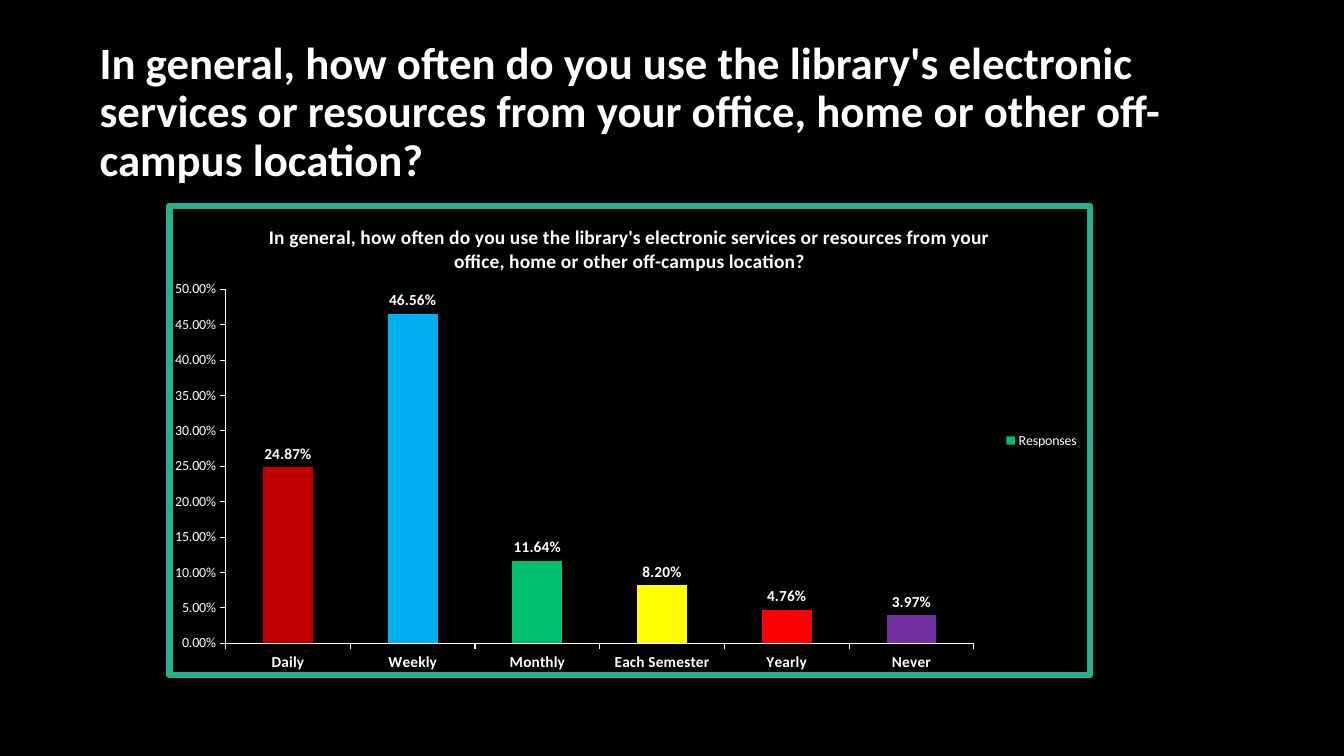
from pptx import Presentation
from pptx.chart.data import CategoryChartData
from pptx.dml.color import RGBColor
from pptx.enum.chart import XL_CHART_TYPE, XL_LABEL_POSITION, XL_LEGEND_POSITION, XL_TICK_MARK
from pptx.enum.text import MSO_ANCHOR, PP_ALIGN
from pptx.oxml import parse_xml
from pptx.oxml.ns import nsdecls
from pptx.util import Inches, Pt

BLACK = RGBColor(0x00, 0x00, 0x00)
WHITE = RGBColor(0xFF, 0xFF, 0xFF)
TEAL = RGBColor(0x29, 0xAF, 0x8C)
GREEN = RGBColor(0x00, 0xBF, 0x6F)
DARK_RED = RGBColor(0xC0, 0x00, 0x00)
BLUE = RGBColor(0x00, 0xB0, 0xF0)
YELLOW = RGBColor(0xFF, 0xFF, 0x00)
RED = RGBColor(0xFF, 0x00, 0x00)
PURPLE = RGBColor(0x70, 0x30, 0xA0)

QUESTION = ("In general, how often do you use the library's electronic services or "
            "resources from your office, home or other off-campus location?")
RESPONSES = [
    ("Daily", 0.2487, DARK_RED),
    ("Weekly", 0.4656, BLUE),
    ("Monthly", 0.1164, GREEN),
    ("Each Semester", 0.082, YELLOW),
    ("Yearly", 0.0476, RED),
    ("Never", 0.0397, PURPLE),
]
PERCENT = "0.00%"


def set_font(font, size, bold=False, color=WHITE, name="Calibri"):
    font.name = name
    font.size = Pt(size)
    font.bold = bold
    font.color.rgb = color


def write_text(frame, text, spacing=None, align=None, **font_format):
    paragraph = frame.paragraphs[0]
    paragraph.line_spacing = spacing
    paragraph.alignment = align
    run = paragraph.add_run()
    run.text = text
    set_font(run.font, **font_format)


class SurveySlide:
    """Holds the style and the current slide."""

    def __init__(self, presentation, background=BLACK):
        self.slide = presentation.slides.add_slide(presentation.slide_layouts[6])
        fill = self.slide.background.fill
        fill.solid()
        fill.fore_color.rgb = background

    def heading(self, text, left, top, width, height):
        box = self.slide.shapes.add_textbox(Inches(left), Inches(top), Inches(width), Inches(height))
        frame = box.text_frame
        frame.word_wrap = True
        frame.vertical_anchor = MSO_ANCHOR.MIDDLE
        write_text(frame, text, spacing=0.9, align=PP_ALIGN.LEFT, size=32, bold=True)

    def style_axis(self, axis, size, bold=False):
        axis.has_major_gridlines = False
        axis.major_tick_mark = XL_TICK_MARK.OUTSIDE
        axis.minor_tick_mark = XL_TICK_MARK.NONE
        axis.format.line.color.rgb = WHITE
        axis.format.line.width = Pt(0.75)
        set_font(axis.tick_labels.font, size, bold)

    def frame_chart(self, chart, color, width):
        chart.element.xpath("c:chart")[0].addnext(parse_xml(
            f'<c:spPr {nsdecls("c", "a")}><a:noFill/><a:ln w="{Pt(width)}"><a:solidFill>'
            f'<a:srgbClr val="{color}"/></a:solidFill><a:round/></a:ln></c:spPr>'))

    def place_plot(self, chart, **place):
        plot_area = chart.element.xpath("c:chart/c:plotArea")[0]
        for layout in plot_area.xpath("c:layout"):
            plot_area.remove(layout)
        modes = '<c:xMode val="edge"/><c:yMode val="edge"/>'
        sizes = "".join(f'<c:{side} val="{share}"/>' for side, share in place.items())
        plot_area.insert(0, parse_xml(
            f'<c:layout {nsdecls("c")}><c:manualLayout><c:layoutTarget val="inner"/>'
            f'{modes}{sizes}</c:manualLayout></c:layout>'))

    def column_chart(self, title, series_name, rows, left, top, width, height):
        data = CategoryChartData(number_format=PERCENT)
        data.categories = [answer for answer, _, _ in rows]
        data.add_series(series_name, [share for _, share, _ in rows])
        chart = self.slide.shapes.add_chart(
            XL_CHART_TYPE.COLUMN_CLUSTERED, Inches(left), Inches(top),
            Inches(width), Inches(height), data).chart
        set_font(chart.font, 10)

        # Title and legend
        chart.has_title = True
        write_text(chart.chart_title.text_frame, title, size=14, bold=True)
        chart.chart_title.include_in_layout = False
        chart.has_legend = True
        chart.legend.position = XL_LEGEND_POSITION.RIGHT
        chart.legend.include_in_layout = False
        set_font(chart.legend.font, 10)

        # Axes
        self.style_axis(chart.category_axis, 11, bold=True)
        self.style_axis(chart.value_axis, 10)
        chart.value_axis.minimum_scale = 0
        chart.value_axis.maximum_scale = 0.5
        chart.value_axis.major_unit = 0.05
        chart.value_axis.tick_labels.number_format = PERCENT
        chart.value_axis.tick_labels.number_format_is_linked = False

        # Columns, one colour per answer
        plot = chart.plots[0]
        plot.gap_width = 150
        plot.vary_by_categories = False
        series = plot.series[0]
        series.invert_if_negative = False
        series.format.fill.solid()
        series.format.fill.fore_color.rgb = GREEN
        for index, (_, _, color) in enumerate(rows):
            if color != GREEN:
                fill = series.points[index].format.fill
                fill.solid()
                fill.fore_color.rgb = color

        # Value labels
        labels = series.data_labels
        labels.show_value = True
        labels.number_format = PERCENT
        labels.number_format_is_linked = False
        labels.position = XL_LABEL_POSITION.OUTSIDE_END
        set_font(labels.font, 11, bold=True)

        self.frame_chart(chart, TEAL, 4.5)
        self.place_plot(chart, x=0.061, y=0.178, w=0.813, h=0.754)


def main():
    presentation = Presentation()
    presentation.slide_width = Inches(13.33)
    presentation.slide_height = Inches(7.5)
    survey = SurveySlide(presentation)
    survey.heading(QUESTION, 0.89, 0.4, 11.53, 1.45)
    survey.column_chart(QUESTION, "Responses", RESPONSES, 1.65, 2.01, 9.19, 4.72)
    presentation.save("out.pptx")


if __name__ == "__main__":
    main()
